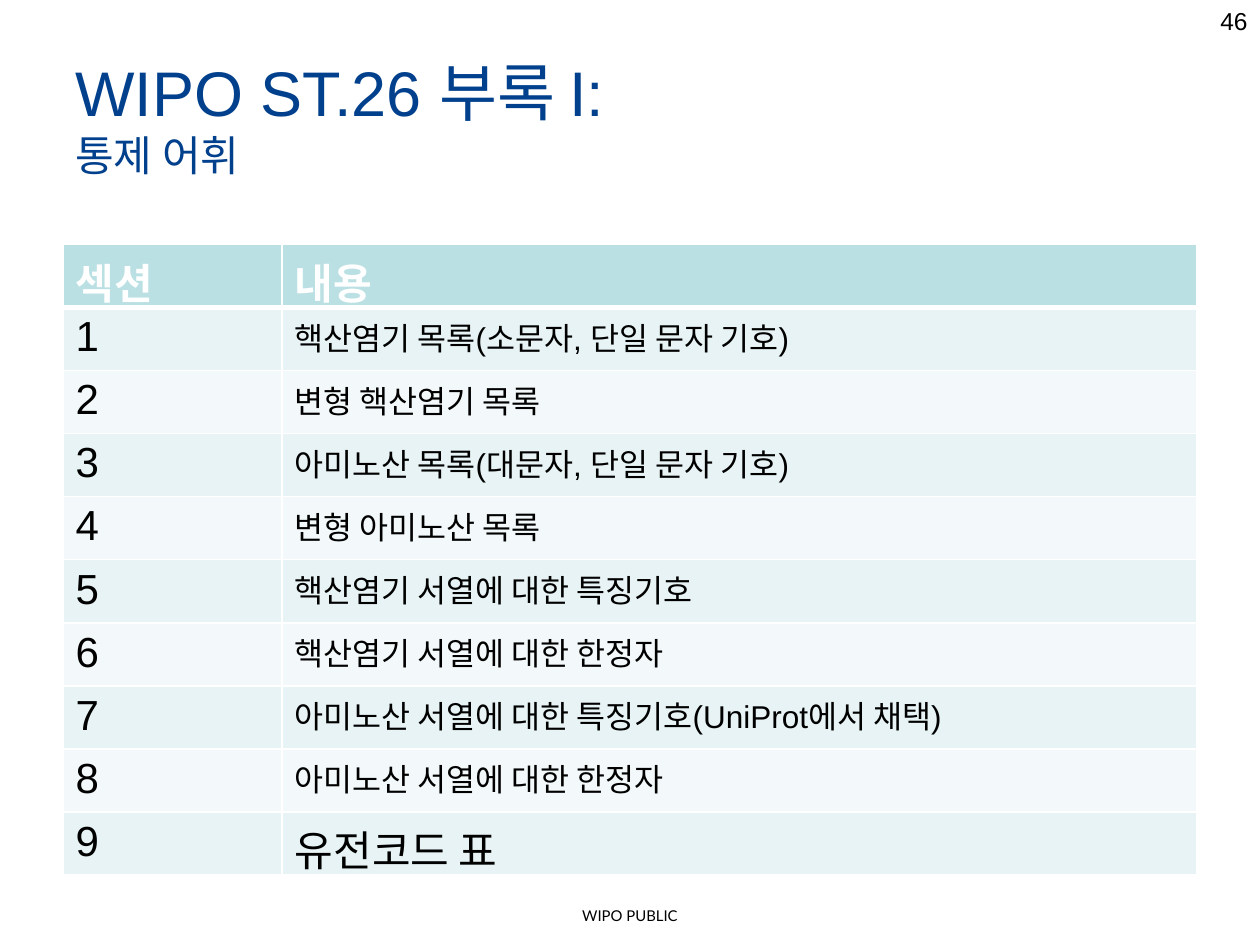
from lxml import etree
from pptx import Presentation
from pptx.dml.color import RGBColor
from pptx.enum.text import MSO_ANCHOR, PP_ALIGN
from pptx.oxml.ns import qn
from pptx.util import Inches, Pt

LEFT, CENTER, RIGHT = PP_ALIGN.LEFT, PP_ALIGN.CENTER, PP_ALIGN.RIGHT
TOP, MIDDLE = MSO_ANCHOR.TOP, MSO_ANCHOR.MIDDLE

BLACK = RGBColor(0x00, 0x00, 0x00)
WHITE = RGBColor(0xFF, 0xFF, 0xFF)
NAVY = RGBColor(0x00, 0x40, 0x8C)
HEADER_FILL = RGBColor(0xBB, 0xE0, 0xE3)
BAND_FILLS = [RGBColor(0xF3, 0xF9, 0xFA), RGBColor(0xE7, 0xF3, 0xF4)]

TITLE = [("WIPO ST.26 부록 I:", 36), ("통제 어휘", 24)]
FOOTER = [("WIPO PUBLIC", 8.5)]
PAGE_NUMBER = [("46", 14)]
HEADER = ("섹션", "내용")
SECTIONS = [
    "핵산염기 목록(소문자, 단일 문자 기호)",
    "변형 핵산염기 목록",
    "아미노산 목록(대문자, 단일 문자 기호)",
    "변형 아미노산 목록",
    "핵산염기 서열에 대한 특징기호",
    "핵산염기 서열에 대한 한정자",
    "아미노산 서열에 대한 특징기호(UniProt에서 채택)",
    "아미노산 서열에 대한 한정자",
    "유전코드 표",
]
COL_WIDTHS = [1.74, 7.26]
ROW_HEIGHT = 0.41


def style_run(r, size, color, font="Arial", bold=False):
    r.font.size = Pt(size)
    r.font.name = font
    r.font.color.rgb = color
    r.font.bold = bold


def add_text(slide, box, parts, color, font="Arial", align=LEFT, anchor=TOP):
    tf = slide.shapes.add_textbox(*map(Inches, box)).text_frame
    tf.word_wrap = True
    tf.vertical_anchor = anchor
    p = tf.paragraphs[0]
    p.alignment = align
    for i, (text, size) in enumerate(parts):
        if i:
            p.add_line_break()
        r = p.add_run()
        r.text = text
        style_run(r, size, color, font)


def set_border(cell, side, width):
    tc_pr = cell._tc.get_or_add_tcPr()
    ln = etree.SubElement(tc_pr, qn("a:" + side), w=str(Pt(width)))
    fill = etree.SubElement(ln, qn("a:solidFill"))
    etree.SubElement(fill, qn("a:srgbClr"), val=str(WHITE))


def add_section_table(slide):
    rows = [HEADER] + [(str(n), text) for n, text in enumerate(SECTIONS, 1)]
    last = len(rows) - 1
    table = slide.shapes.add_table(
        len(rows), len(HEADER), Inches(0.5), Inches(1.94),
        Inches(sum(COL_WIDTHS)), Inches(ROW_HEIGHT * len(rows))).table
    for col, width in zip(table.columns, COL_WIDTHS):
        col.width = Inches(width)
    for i, row in enumerate(rows):
        table.rows[i].height = Inches(ROW_HEIGHT)
        is_header = i == 0
        for j, text in enumerate(row):
            cell = table.cell(i, j)
            cell.text_frame.text = text
            size = 18 if j == 1 and 0 < i < last else 24
            style_run(cell.text_frame.paragraphs[0].runs[0], size,
                      WHITE if is_header else BLACK, bold=is_header)
            set_border(cell, "lnL", 1)
            set_border(cell, "lnR", 1)
            set_border(cell, "lnT", 3 if i == 1 else 1)
            set_border(cell, "lnB", 3 if is_header else 1)
            cell.fill.solid()
            cell.fill.fore_color.rgb = HEADER_FILL if is_header else BAND_FILLS[i % 2]


def main():
    prs = Presentation()
    prs.slide_width, prs.slide_height = Inches(10), Inches(7.5)
    slide = prs.slides.add_slide(prs.slide_layouts[6])
    add_text(slide, (0, 7.15, 10, 0.24), FOOTER, BLACK, "Lato", CENTER)
    add_text(slide, (0.5, 0.3, 9, 1.25), TITLE, NAVY, anchor=MIDDLE)
    add_section_table(slide)
    add_text(slide, (7.67, 0, 2.33, 0.52), PAGE_NUMBER, BLACK, align=RIGHT)
    prs.save("out.pptx")


if __name__ == "__main__":
    main()
